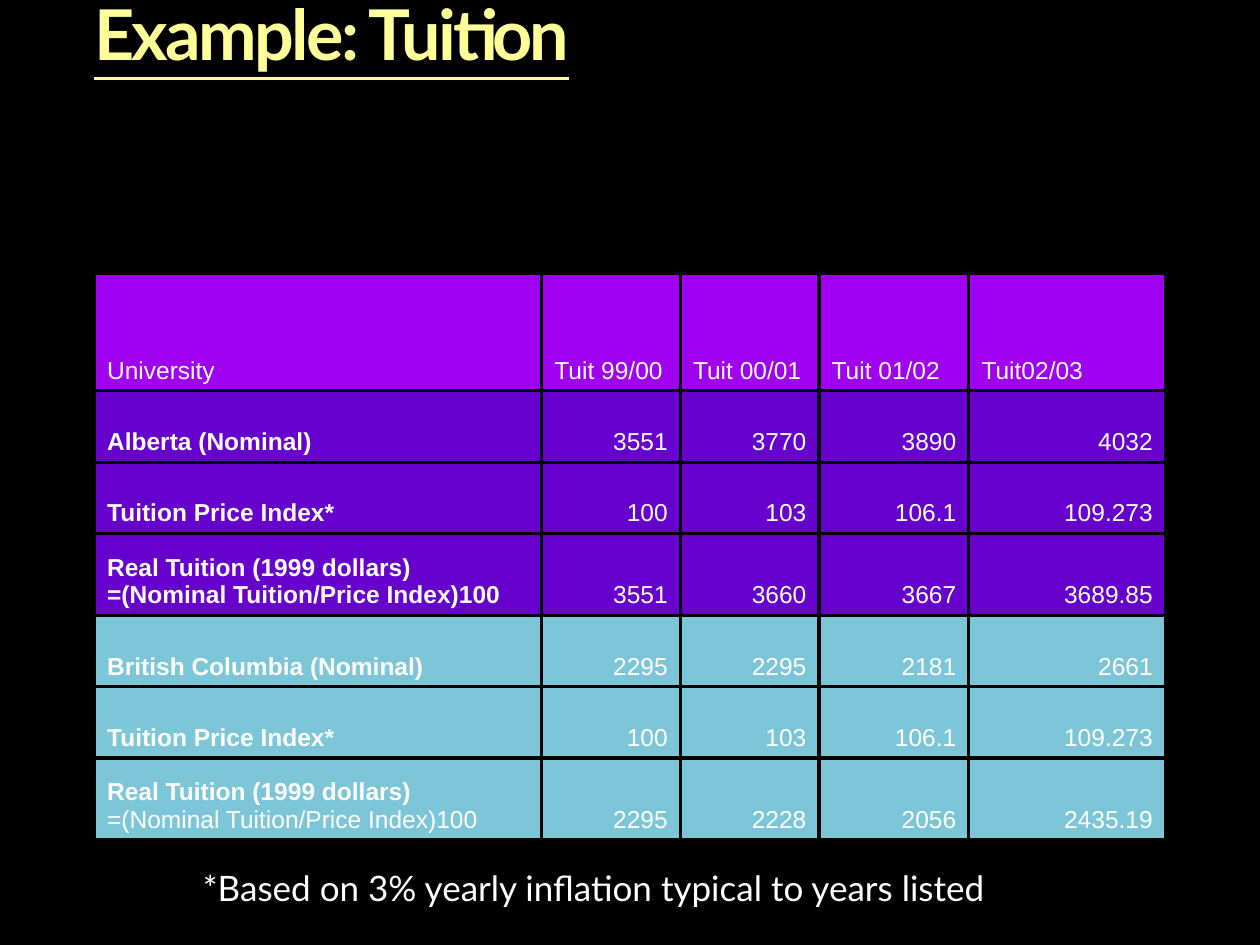
from pptx import Presentation
from pptx.dml.color import RGBColor as RGB
from pptx.enum.text import MSO_ANCHOR as Anchor, PP_ALIGN as Align
from pptx.oxml import parse_xml
from pptx.oxml.ns import nsdecls
from pptx.util import Inches, Pt

BLACK, WHITE, YELLOW = "000000", "FFFFFF", "FFFF99"
MAGENTA, PURPLE, TEAL = "A000F0", "6600CC", "7CC6D8"


def color(value):
    return RGB.from_string(value)


class Deck:
    heading_font = "Lato"
    table_font = "Arial"
    hanging = Inches(0.38)

    def __init__(self, prs):
        self.prs = prs
        self.s = prs.slides.add_slide(prs.slide_layouts[6])
        fill = self.s.background.fill
        fill.solid()
        fill.fore_color.rgb = color(BLACK)

    def x(self, percent):
        return round(self.prs.slide_width * percent / 100)

    def y(self, percent):
        return round(self.prs.slide_height * percent / 100)

    def run(self, p, text, size, font, fill=WHITE, bold=False):
        r = p.add_run()
        r.text = text
        r.font.size = Pt(size)
        r.font.name = font
        r.font.bold = bold
        r.font.color.rgb = color(fill)
        return r

    def text(self, left, top, width, height, text, size, fill=WHITE, bold=False, indent=0):
        sp = self.s.shapes.add_textbox(self.x(left), self.y(top), self.x(width), self.y(height))
        tf = sp.text_frame
        tf.word_wrap = True
        tf.margin_left = tf.margin_right = tf.margin_top = tf.margin_bottom = 0
        p = tf.paragraphs[0]
        p.line_spacing = 0.9
        if indent:
            p._p.get_or_add_pPr().set("marL", str(self.x(indent)))
        return self.run(p, text, size, self.heading_font, fill, bold)

    def title(self, *args):
        r = self.text(*args, fill=YELLOW, bold=True)
        r.font.underline = True
        r.font._element.set("spc", "-150")

    def cell(self, cell, lines, fill, align):
        cell.fill.solid()
        cell.fill.fore_color.rgb = color(fill)
        cell.vertical_anchor = Anchor.BOTTOM
        tf = cell.text_frame
        for i, (text, bold) in enumerate(lines):
            p = tf.add_paragraph() if i else tf.paragraphs[0]
            p.alignment = align
            pPr = p._p.get_or_add_pPr()
            pPr.set("marL", str(self.hanging))
            pPr.set("indent", str(-self.hanging))
            self.run(p, text, 14, self.table_font, bold=bold)
        tcPr = cell._tc.get_or_add_tcPr()
        for i, side in enumerate(("lnL", "lnR", "lnT", "lnB")):
            tcPr.insert(i, parse_xml(
                f'<a:{side} {nsdecls("a")} w="{Pt(2)}"><a:solidFill>'
                f'<a:srgbClr val="{BLACK}"/></a:solidFill></a:{side}>'))

    def table(self, left, top, widths, heights, rows):
        shape = self.s.shapes.add_table(len(heights), len(widths), self.x(left), self.y(top),
                                        self.x(sum(widths)), self.y(sum(heights)))
        table = shape.table
        table.first_row = table.horz_banding = False
        for column, width in zip(table.columns, widths):
            column.width = self.x(width)
        for i, (height, (fill, label, values)) in enumerate(zip(heights, rows)):
            table.rows[i].height = self.y(height)
            self.cell(table.cell(i, 0), label, fill, Align.LEFT)
            for j, value in enumerate(values, 1):
                self.cell(table.cell(i, j), [(value, False)], fill,
                          Align.RIGHT if i else Align.LEFT)


def main():
    prs = Presentation()
    prs.slide_width, prs.slide_height = Inches(10), Inches(7.5)
    deck = Deck(prs)
    deck.title(7.5, 0, 85, 8.1, "Example: Tuition", 40)

    index = [("Tuition Price Index*", True)], ["100", "103", "106.1", "109.273"]
    real = ("Real Tuition (1999 dollars)", True)
    formula = "=(Nominal Tuition/Price Index)100"
    rows = [
        (MAGENTA, [("University", False)], ["Tuit 99/00", "Tuit 00/01", "Tuit 01/02", "Tuit02/03"]),
        (PURPLE, [("Alberta (Nominal)", True)], ["3551", "3770", "3890", "4032"]),
        (PURPLE, *index),
        (PURPLE, [real, (formula, True)], ["3551", "3660", "3667", "3689.85"]),
        (TEAL, [("British Columbia (Nominal)", True)], ["2295", "2295", "2181", "2661"]),
        (TEAL, *index),
        (TEAL, [real, (formula, False)], ["2295", "2228", "2056", "2435.19"]),
    ]
    deck.table(7.5, 28.95, [35.5, 11, 11, 11.9, 15.6], [12.4] + [7.55, 7.55, 8.67] * 2, rows)
    deck.text(1.7, 92.25, 98.3, 4, "*Based on 3% yearly inflation typical to years listed", 20,
              indent=14.4)
    prs.save("out.pptx")


if __name__ == "__main__":
    main()
